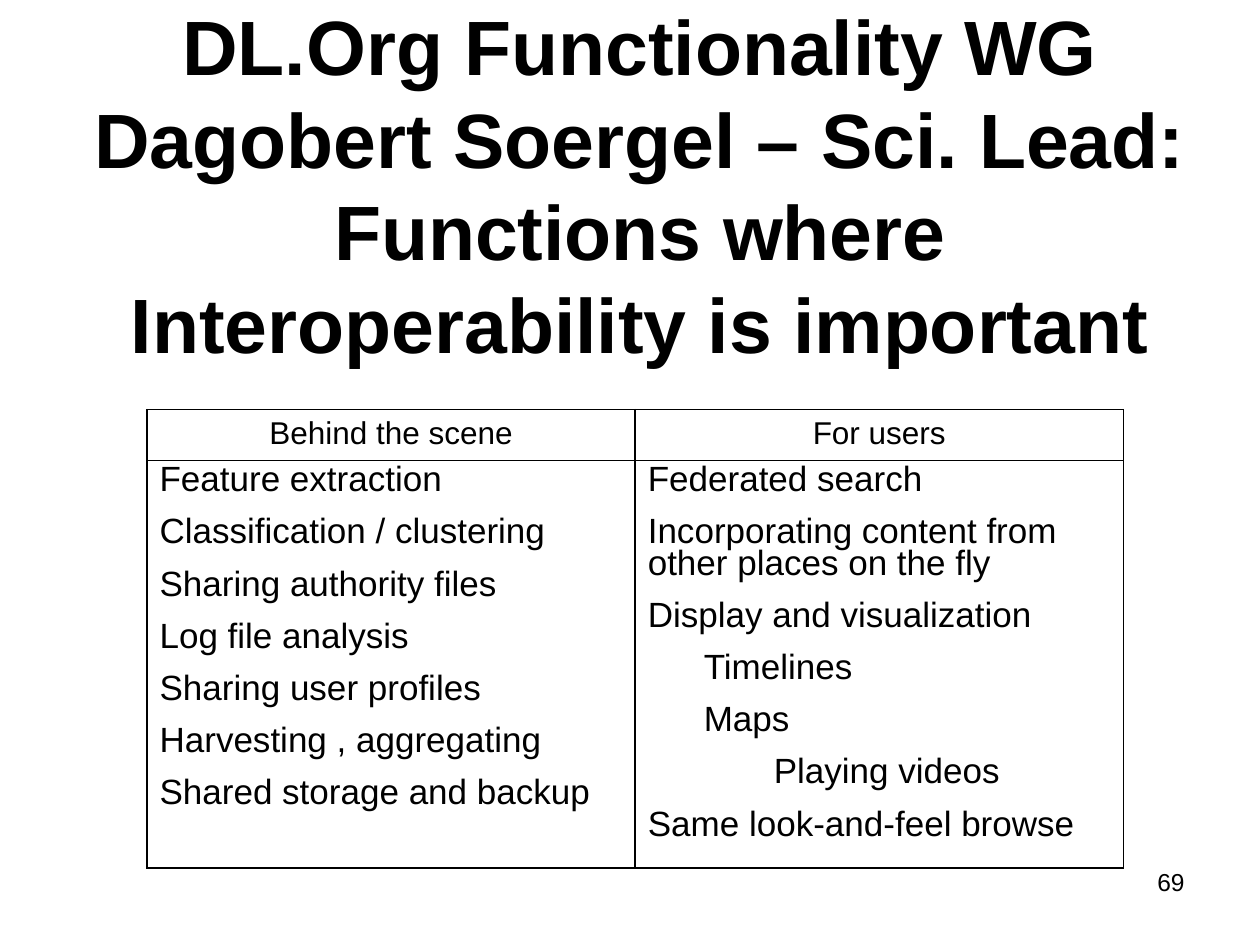
import pptx
import pptx.util
import pptx.dml.color
import pptx.enum.text
import pptx.oxml.ns
from lxml import etree

Pt = pptx.util.Pt
Align = pptx.enum.text.PP_ALIGN
Anchor = pptx.enum.text.MSO_ANCHOR
qn = pptx.oxml.ns.qn

INK, PAPER = "000000", "FFFFFF"
TITLE = ("DL.Org Functionality WG\vDagobert Soergel – Sci. Lead:\v"
         "Functions where Interoperability is important")
PAGE = "69"
HEADS = ["Behind the scene", "For users"]
# Each item: text, tab stop in points (0 for none)
LISTS = [
    [("Feature extraction", 0),
     ("Classification / clustering", 0),
     ("Sharing authority files", 0),
     ("Log file analysis", 0),
     ("Sharing user profiles", 0),
     ("Harvesting , aggregating", 0),
     ("Shared storage and backup", 0)],
    [("Federated search", 0),
     ("Incorporating content from other places on the fly", 0),
     ("Display and visualization", 0),
     ("Timelines", 32),
     ("Maps", 32),
     ("Playing videos", 72),
     ("Same look-and-feel browse", 0)],
]
LEFT, TOP, COL = 84, 234, 279
ROWS = [29, 222]


def color(code):
    return pptx.dml.color.RGBColor.from_string(code)


def write(para, text, size=20, bold=False, align=Align.LEFT, line=None, before=0, tab=0):
    para.alignment = align
    para.line_spacing = line
    para.space_before = Pt(before)
    if tab:
        stops = etree.SubElement(para._p.get_or_add_pPr(), qn("a:tabLst"))
        etree.SubElement(stops, qn("a:tab"), pos=str(Pt(tab)), algn="l")
        text = "\t" + text
    para.text = text
    for run in para.runs:
        run.font.name = "Arial"
        run.font.size = Pt(size)
        run.font.bold = bold
        run.font.color.rgb = color(INK)


def add_box(slide, x, y, w, h, text, anchor=Anchor.TOP, **form):
    frame = slide.shapes.add_textbox(Pt(x), Pt(y), Pt(w), Pt(h)).text_frame
    frame.word_wrap = True
    frame.vertical_anchor = anchor
    write(frame.paragraphs[0], text, **form)


def style(cell):
    """Give a cell a thin border on all sides and a plain fill."""
    props = cell._tc.get_or_add_tcPr()
    for side in ("lnL", "lnR", "lnT", "lnB"):
        edge = etree.SubElement(props, qn("a:" + side), w=str(Pt(1)))
        fill = etree.SubElement(edge, qn("a:solidFill"))
        etree.SubElement(fill, qn("a:srgbClr"), val=INK)
    cell.fill.solid()
    cell.fill.fore_color.rgb = color(PAPER)


def add_grid(slide):
    table = slide.shapes.add_table(
        2, 2, Pt(LEFT), Pt(TOP), Pt(2 * COL), Pt(sum(ROWS))).table
    for row, high in zip(table.rows, ROWS):
        row.height = Pt(high)
    for col, (head, items) in enumerate(zip(HEADS, LISTS)):
        table.columns[col].width = Pt(COL)
        top, body = table.cell(0, col), table.cell(1, col)
        style(top)
        style(body)
        write(top.text_frame.paragraphs[0], head, size=18, align=Align.CENTER)
        frame = body.text_frame
        for i, (text, tab) in enumerate(items):
            para = frame.add_paragraph() if i else frame.paragraphs[0]
            write(para, text, line=0.8, before=12, tab=tab)


def main():
    deck = pptx.Presentation()
    deck.slide_width, deck.slide_height = Pt(720), Pt(540)
    slide = deck.slides.add_slide(deck.slide_layouts[6])
    add_box(slide, 42, 60, 648, 90, TITLE, anchor=Anchor.MIDDLE, size=44,
            bold=True, align=Align.CENTER, line=Pt(52.8))
    add_grid(slide)
    add_box(slide, 516, 492, 168, 37.5, PAGE, size=14, align=Align.RIGHT)
    deck.save("out.pptx")


if __name__ == "__main__":
    main()
